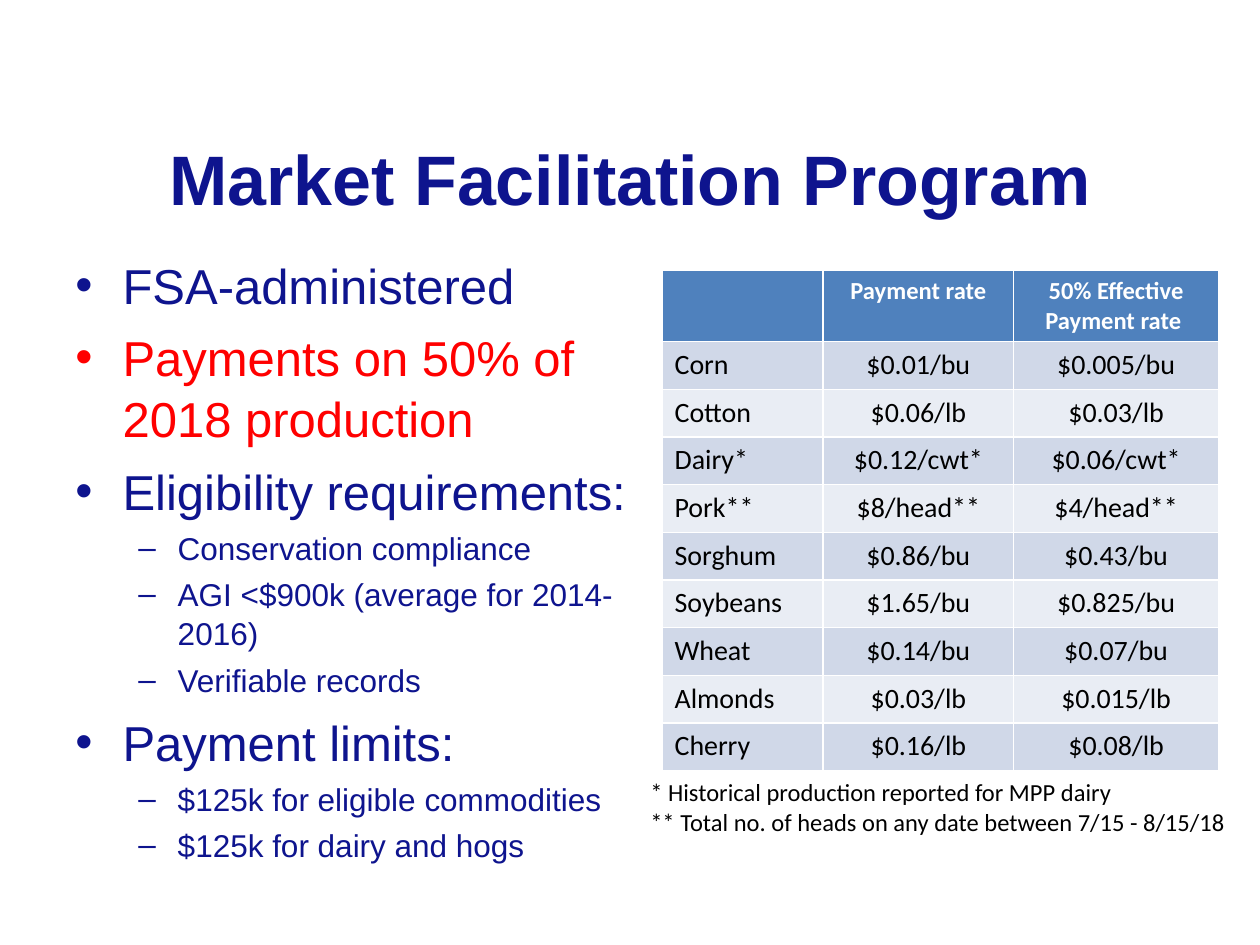
import lxml.etree
import pptx
import pptx.dml.color
import pptx.enum.text
import pptx.oxml.ns
import pptx.util

Pt = pptx.util.Pt
ALIGN = pptx.enum.text.PP_ALIGN
ANCHOR = pptx.enum.text.MSO_ANCHOR

NAVY = "0E148E"
TITLE = {"name": "Arial", "size": Pt(40), "bold": True}
HEADER = {"name": "Calibri", "size": Pt(14), "bold": True}
CELL = {"name": "Calibri", "size": Pt(16), "bold": False}
NOTE = {"name": "Calibri", "size": Pt(14)}
LEVELS = [
    {"bullet": "•", "margin": 27, "hang": 27, "before": 6.4,
     "font": {"name": "Arial", "size": Pt(28)}},
    {"bullet": "–", "margin": 58.5, "hang": 22.5, "before": 4.1,
     "font": {"name": "Arial", "size": Pt(18)}},
]
POINTS = [
    (0, "FSA-administered", NAVY),
    (0, "Payments on 50% of 2018 production", "FF0000"),
    (0, "Eligibility requirements:", NAVY),
    (1, "Conservation compliance", NAVY),
    (1, "AGI <$900k (average for 2014-2016)", NAVY),
    (1, "Verifiable records", NAVY),
    (0, "Payment limits:", NAVY),
    (1, "$125k for eligible commodities", NAVY),
    (1, "$125k for dairy and hogs", NAVY),
]
RATES = [
    ("", "Payment rate", "50% Effective Payment rate "),
    ("Corn", "$0.01/bu", "$0.005/bu"),
    ("Cotton", "$0.06/lb", "$0.03/lb"),
    ("Dairy*", "$0.12/cwt*", "$0.06/cwt*"),
    ("Pork**", "$8/head**", "$4/head**"),
    ("Sorghum", "$0.86/bu", "$0.43/bu"),
    ("Soybeans", "$1.65/bu", "$0.825/bu"),
    ("Wheat", "$0.14/bu", "$0.07/bu"),
    ("Almonds", "$0.03/lb", "$0.015/lb"),
    ("Cherry", "$0.16/lb", "$0.08/lb"),
]
NOTES = [
    "* Historical production reported for MPP dairy",
    "** Total no. of heads on any date between 7/15 - 8/15/18",
]


def rgb(value):
    """Turn a hex string into a colour."""
    return pptx.dml.color.RGBColor.from_string(value)


def write(p, text, fmt, color, align=ALIGN.LEFT):
    """Add one formatted run to a paragraph."""
    p.alignment = align
    r = p.add_run()
    r.text = text
    for name, value in fmt.items():
        setattr(r.font, name, value)
    r.font.color.rgb = rgb(color)


def paragraphs(tf, count):
    """Return the given number of paragraphs of an empty text frame."""
    return [tf.paragraphs[0]] + [tf.add_paragraph() for _ in range(count - 1)]


def set_bullet(p, level):
    """Give a paragraph the bullet and indents of its level."""
    pPr = p._p.get_or_add_pPr()
    pPr.set("marL", str(Pt(level["margin"])))
    pPr.set("indent", str(-Pt(level["hang"])))
    for tag, key, value in (("a:buFont", "typeface", "Arial"),
                            ("a:buChar", "char", level["bullet"])):
        lxml.etree.SubElement(pPr, pptx.oxml.ns.qn(tag)).set(key, value)


def add_title(s, left, top, width, height):
    """Place and fill the title placeholder."""
    sp = s.shapes.title
    sp.left, sp.top, sp.width, sp.height = map(Pt, (left, top, width, height))
    tf = sp.text_frame
    tf.word_wrap = True
    tf.vertical_anchor = ANCHOR.MIDDLE
    write(tf.paragraphs[0], "Market Facilitation Program", TITLE, NAVY, ALIGN.CENTER)


def add_points(s, left, top, width, height):
    """Add the two-level list of programme rules."""
    tf = s.shapes.add_textbox(*map(Pt, (left, top, width, height))).text_frame
    tf.word_wrap = True
    for i, (p, (depth, text, color)) in enumerate(zip(paragraphs(tf, len(POINTS)), POINTS)):
        level = LEVELS[depth]
        p.level = depth
        set_bullet(p, level)
        p.line_spacing = 1.04
        if i:
            p.space_before = Pt(level["before"])
        write(p, text, level["font"], color)


def add_rates(s, left, top, widths, header, row):
    """Add the payment rate table."""
    height = header + row * (len(RATES) - 1)
    box = map(Pt, (left, top, sum(widths), height))
    table = s.shapes.add_table(len(RATES), len(widths), *box).table
    for col, width in zip(table.columns, widths):
        col.width = Pt(width)
    for i, values in enumerate(RATES):
        table.rows[i].height = Pt(row if i else header)
        band = ("E9EDF4", "D0D8E8")[i % 2] if i else "4F81BD"
        fmt, color = (CELL, "000000") if i else (HEADER, "FFFFFF")
        for j, text in enumerate(values):
            cell = table.cell(i, j)
            cell.fill.solid()
            cell.fill.fore_color.rgb = rgb(band)
            if text:
                align = ALIGN.CENTER if j else ALIGN.LEFT
                write(cell.text_frame.paragraphs[0], text, fmt, color, align)


def add_notes(s, left, top, width, height):
    """Add the footnotes under the table."""
    tf = s.shapes.add_textbox(*map(Pt, (left, top, width, height))).text_frame
    tf.word_wrap = True
    for p, text in zip(paragraphs(tf, len(NOTES)), NOTES):
        write(p, text, NOTE, "000000")


def main():
    """Build the slide and save it."""
    prs = pptx.Presentation()
    prs.slide_width, prs.slide_height = Pt(720), Pt(540)
    s = prs.slides.add_slide(prs.slide_layouts[5])
    add_title(s, 36, 75, 648, 52.5)
    add_points(s, 36, 141, 332.5, 354)
    add_rates(s, 378.3, 154.2, (92, 109, 117), 41, 27.25)
    add_notes(s, 364.5, 440.6, 355.5, 41)
    prs.save("out.pptx")


if __name__ == "__main__":
    main()
